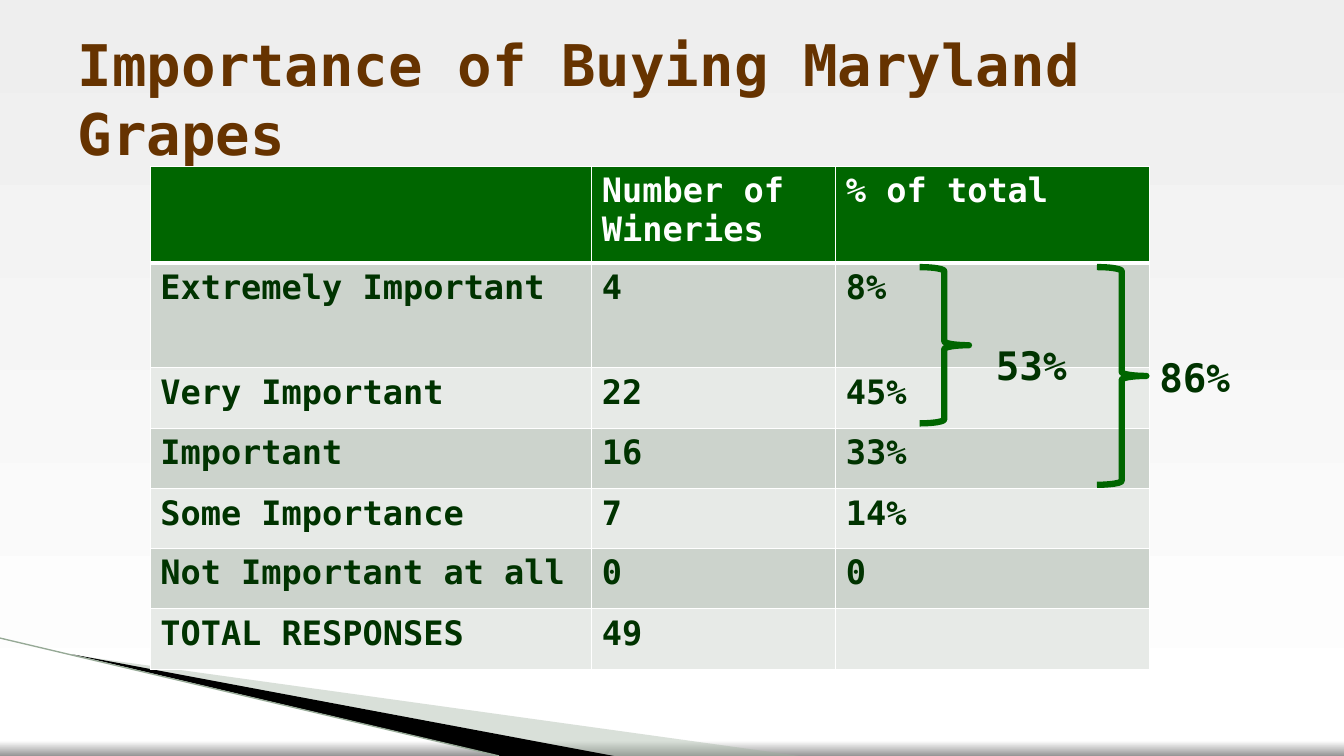
from copy import deepcopy

from pptx import Presentation
from pptx.dml.color import RGBColor
from pptx.enum.shapes import MSO_CONNECTOR as Link, MSO_SHAPE as Shape
from pptx.enum.text import MSO_ANCHOR as Anchor
from pptx.oxml import parse_xml
from pptx.oxml.ns import nsdecls
from pptx.util import Pt

PX = 9144
WIDE, HIGH = 1333, 750
FONT = "DejaVu Sans Mono"
BROWN = RGBColor(0x66, 0x33, 0x00)
GREEN = RGBColor(0x00, 0x66, 0x00)
DARK = RGBColor(0x00, 0x33, 0x00)
SAGE = RGBColor(0x96, 0xA9, 0x96)
MIST = RGBColor(0xA0, 0xB2, 0xA0)
BAND = RGBColor(0xCC, 0xD3, 0xCC)
PALE = RGBColor(0xE7, 0xEA, 0xE7)
WHITE = RGBColor(0xFF, 0xFF, 0xFF)
BLACK = RGBColor(0x00, 0x00, 0x00)
SKY = [(0, RGBColor(0xEE, 0xEE, 0xEE)), (0.98, WHITE), (1, RGBColor(0x95, 0x95, 0x95))]

COLS = [438, 242, 311]
ROWS = [96, 104, 60, 60, 59, 60, 60]
DATA = [
    ("", "Number of Wineries", "% of total"),
    ("Extremely Important", "4", "8%"),
    ("Very Important", "22", "45%"),
    ("Important", "16", "33%"),
    ("Some Importance", "7", "14%"),
    ("Not Important at all", "0", "0"),
    ("TOTAL RESPONSES", "49", ""),
]


def write(frame, text, size=24, color=DARK, bold=True):
    """Put one formatted run of text in a frame."""
    run = frame.paragraphs[0].add_run()
    run.text = text
    font = run.font
    font.name, font.size, font.bold = FONT, Pt(size), bold
    font.color.rgb = color


class Deck:
    """Holds the style and the current slide."""

    def __init__(self):
        """Start a deck with one blank slide."""
        self.show = Presentation()
        self.show.slide_width, self.show.slide_height = WIDE * PX, HIGH * PX
        self.slide = self.show.slides.add_slide(self.show.slide_layouts[6])
        self.shapes = self.slide.shapes

    def shade(self, stops):
        """Fill the background from top to bottom."""
        fill = self.slide.background.fill
        fill.gradient()
        fill.gradient_angle = 270
        last = self.slide.element.xpath(".//a:gs")[-1]
        last.addnext(deepcopy(last))
        for stop, (place, color) in zip(fill.gradient_stops, stops):
            stop.position = place
            stop.color.rgb = color

    def blade(self, points, color, alpha=100):
        """Draw a filled outline without a border."""
        pen = self.shapes.build_freeform(*points[0], scale=PX)
        pen.add_line_segments(points[1:], close=True)
        shape = pen.convert_to_shape()
        shape.shadow.inherit = False
        shape.fill.solid()
        shape.fill.fore_color.rgb = color
        shape.line.fill.background()
        if alpha < 100:
            tint = shape.element.spPr.xpath("./a:solidFill/a:srgbClr")[0]
            tint.append(parse_xml(f'<a:alpha {nsdecls("a")} val="{alpha * 1000}"/>'))

    def rule(self, x1, y1, x2, y2, color, width):
        """Draw a straight line."""
        line = self.shapes.add_connector(
            Link.STRAIGHT, x1 * PX, y1 * PX, x2 * PX, y2 * PX)
        line.line.color.rgb, line.line.width = color, Pt(width)
        line.element.spPr.append(parse_xml(f'<a:effectLst {nsdecls("a")}/>'))

    def label(self, x, y, w, h, text, wrap=False, anchor=Anchor.TOP, **style):
        """Add a text box."""
        box = self.shapes.add_textbox(x * PX, y * PX, w * PX, h * PX)
        frame = box.text_frame
        frame.word_wrap, frame.vertical_anchor = wrap, anchor
        write(frame, text, **style)

    def brace(self, x, y, w, h):
        """Draw a right brace."""
        shape = self.shapes.add_shape(
            Shape.RIGHT_BRACE, x * PX, y * PX, w * PX, h * PX)
        shape.adjustments[0], shape.adjustments[1] = 0.08, 0.5
        shape.shadow.inherit = False
        shape.fill.background()
        shape.line.color.rgb, shape.line.width = GREEN, Pt(4.5)

    def edge(self, cell, row):
        """Give a cell white borders, thick under the header."""
        thick = {("B", 0), ("T", 1)}
        for at, side in enumerate("LRTB"):
            width = Pt(3 if (side, row) in thick else 1)
            cell._tc.get_or_add_tcPr().insert(at, parse_xml(
                f'<a:ln{side} {nsdecls("a")} w="{width}"><a:solidFill>'
                f'<a:srgbClr val="{WHITE}"/></a:solidFill></a:ln{side}>'))

    def table(self, x, y, cols, rows, data):
        """Add a banded table with a header row."""
        grid = self.shapes.add_table(
            len(rows), len(cols), x * PX, y * PX, sum(cols) * PX, sum(rows) * PX).table
        grid.horz_banding = False
        for col, width in zip(grid.columns, cols):
            col.width = width * PX
        for r, (row, height, texts) in enumerate(zip(grid.rows, rows, data)):
            row.height = height * PX
            back = (BAND if r % 2 else PALE) if r else GREEN
            for cell, text in zip(row.cells, texts):
                cell.fill.solid()
                cell.fill.fore_color.rgb = back
                self.edge(cell, r)
                if text:
                    write(cell.text_frame, text, color=DARK if r else WHITE)


def main():
    """Build the slide and save it."""
    deck = Deck()
    deck.shade(SKY)
    deck.blade([(73, 650), (793, HIGH), (608, HIGH)], MIST, alpha=40)
    deck.blade([(71, 649), (609, HIGH), (496, HIGH)], BLACK)
    deck.rule(0, 633, 495, HIGH, SAGE, 0.95)
    deck.label(67, 30, 1118, 135, "Importance of Buying Maryland Grapes",
               wrap=True, anchor=Anchor.MIDDLE, size=41, color=BROWN)
    deck.table(149, 165, COLS, ROWS, DATA)
    for x, high, left, top, text in [(912, 155, 978, 334, "53%"),
                                     (1088, 216, 1140, 346, "86%")]:
        deck.brace(x, 265, 49, high)
        deck.label(left, top, 96, 57, text, size=28)
    deck.show.save("out.pptx")


if __name__ == "__main__":
    main()
